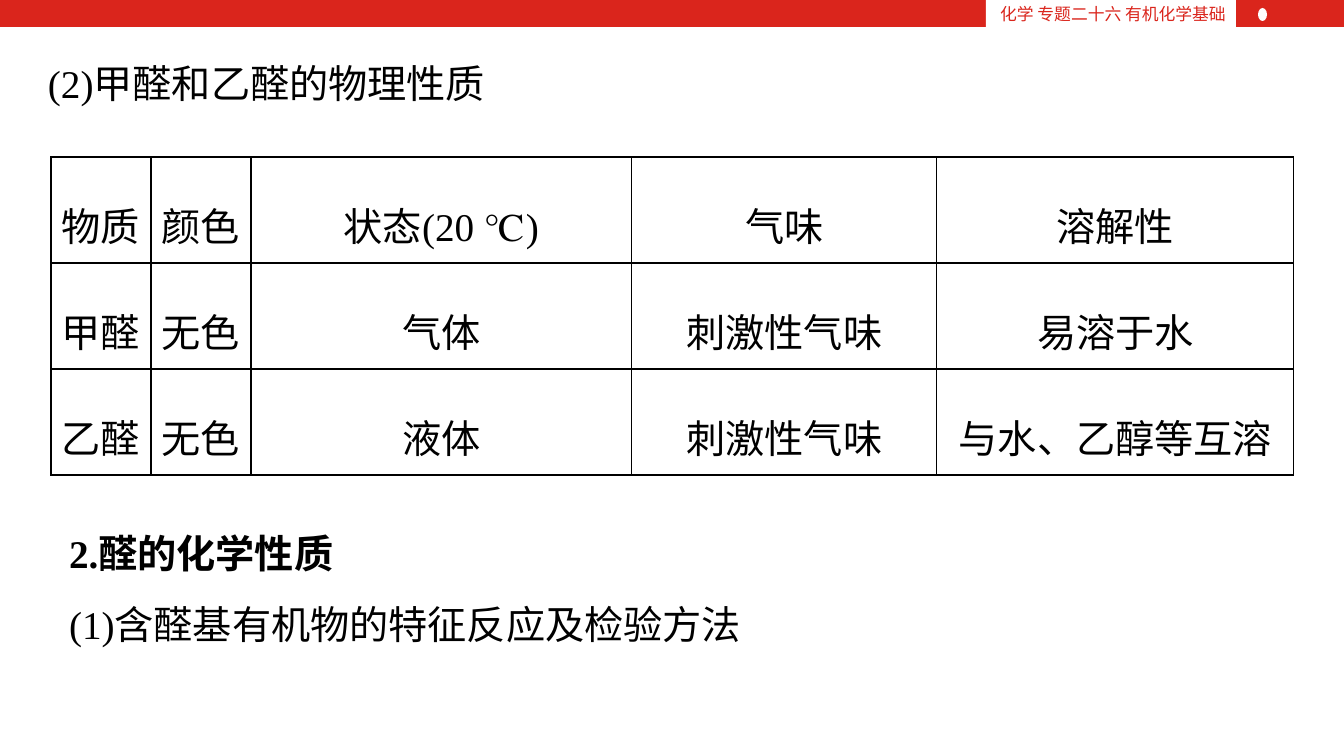
import pptx
import pptx.dml.color
import pptx.enum.shapes
import pptx.enum.text
import pptx.util
from lxml import etree

PX = 914400 / 100.8
FONT = "Times New Roman"
RED, WHITE, BLACK = "DA251C", "FFFFFF", "000000"
ALIGN = pptx.enum.text.PP_ALIGN
SHAPE = pptx.enum.shapes.MSO_SHAPE
MIDDLE = pptx.enum.text.MSO_ANCHOR.MIDDLE
DRAWING_NS = "http://schemas.openxmlformats.org/drawingml/2006/main"


def px(*lengths):
    """Turn pixel lengths into a list of EMU lengths."""
    return [pptx.util.Emu(round(length * PX)) for length in lengths]


def style(paragraph, size, color, align=ALIGN.LEFT, bold=False, spacing=1.5):
    paragraph.alignment = align
    paragraph.line_spacing = spacing
    paragraph.font.name = FONT
    paragraph.font.size = pptx.util.Pt(size)
    paragraph.font.bold = bold
    paragraph.font.color.rgb = pptx.dml.color.RGBColor.from_string(color)


deck = pptx.Presentation()
deck.slide_width, deck.slide_height = px(1344, 756)
slide = deck.slides.add_slide(deck.slide_layouts[6])

# Header: red band, plain mark, chapter label
header = [
    (SHAPE.RECTANGLE, (0, 0, 1344, 27), RED),
    (SHAPE.OVAL, (1258, 8, 9, 13), WHITE),
    (SHAPE.RECTANGLE, (986, 0, 250, 27), WHITE),
]
for preset, box, color in header:
    part = slide.shapes.add_shape(preset, *px(*box))
    part.shadow.inherit = False
    part.fill.solid()
    part.fill.fore_color.rgb = pptx.dml.color.RGBColor.from_string(color)
    part.line.fill.background()
chapter = part.text_frame
chapter.text = "化学 专题二十六 有机化学基础"
chapter.vertical_anchor = MIDDLE
style(chapter.paragraphs[0], 12, RED, ALIGN.RIGHT, spacing=1.0)

# Headings: box, left inset, lines with their weight
headings = [
    ((28, 31, 1290, 73), 20, [("(2)甲醛和乙醛的物理性质", False)]),
    ((59, 501, 987, 152), 10, [("2.醛的化学性质", True),
                               ("(1)含醛基有机物的特征反应及检验方法", False)]),
]
for box, inset, lines in headings:
    heading = slide.shapes.add_textbox(*px(*box)).text_frame
    heading.word_wrap = True
    heading.auto_size = pptx.enum.text.MSO_AUTO_SIZE.SHAPE_TO_FIT_TEXT
    heading.margin_left = px(inset)[0]
    heading.text = "\n".join(text for text, bold in lines)
    for paragraph, (text, bold) in zip(heading.paragraphs, lines):
        style(paragraph, 28, BLACK, bold=bold)

# Physical properties table
properties = [
    ["物质", "颜色", "状态(20 ℃)", "气味", "溶解性"],
    ["甲醛", "无色", "气体", "刺激性气味", "易溶于水"],
    ["乙醛", "无色", "液体", "刺激性气味", "与水、乙醇等互溶"],
]
column_widths = px(100, 100, 381, 305, 357)
table = slide.shapes.add_table(3, 5, *px(51, 157, 1243, 318)).table
table.first_row = table.horz_banding = False
for column, width in zip(table.columns, column_widths):
    column.width = width
for row, texts in zip(table.rows, properties):
    row.height = px(106)[0]
    for cell, text in zip(row.cells, texts):
        cell.text = text
        cell.vertical_anchor = MIDDLE
        cell.margin_left = cell.margin_right = 0
        cell.margin_top = cell.margin_bottom = 0
        style(cell.text_frame.paragraphs[0], 28, BLACK, ALIGN.CENTER)
        cell_properties = cell._tc.get_or_add_tcPr()
        for side in ("lnL", "lnR", "lnT", "lnB"):
            border = etree.SubElement(
                cell_properties, f"{{{DRAWING_NS}}}{side}", w=str(pptx.util.Pt(1)))
            fill = etree.SubElement(border, f"{{{DRAWING_NS}}}solidFill")
            etree.SubElement(fill, f"{{{DRAWING_NS}}}srgbClr", val=BLACK)
        cell.fill.background()

deck.save("out.pptx")
